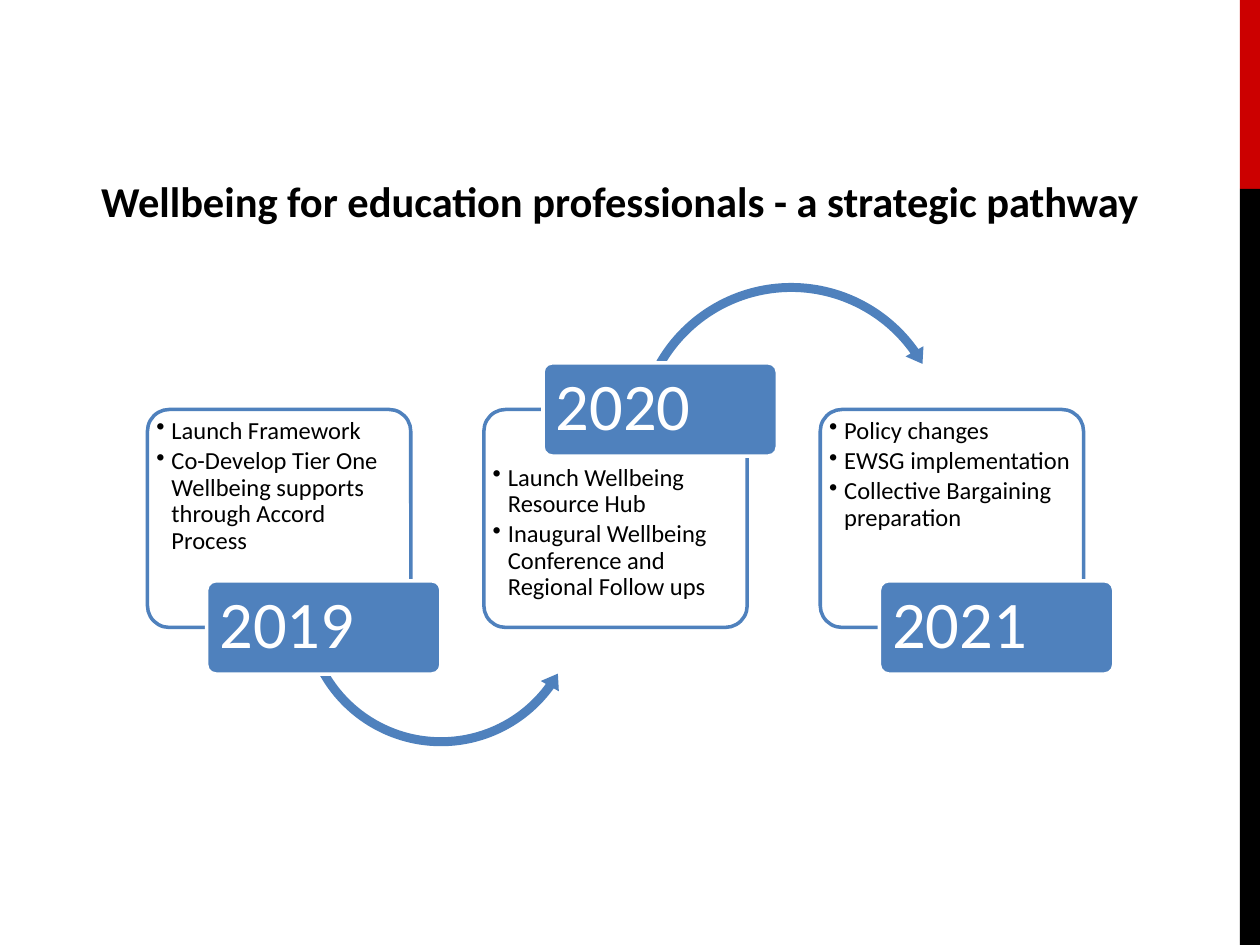
from dataclasses import dataclass
from typing import Optional

from lxml import etree
from pptx import Presentation
from pptx import util as u
from pptx.dml.color import RGBColor
from pptx.enum import shapes, text
from pptx.oxml import ns

RED = RGBColor(0xCC, 0x00, 0x00)
BLACK = RGBColor(0x00, 0x00, 0x00)
BLUE = RGBColor(0x4F, 0x81, 0xBD)
WHITE = RGBColor(0xFF, 0xFF, 0xFF)
SHAPE = shapes.MSO_SHAPE

FIRST_CARD_LEFT, CARD_PITCH = 1.17, 2.67
CARD_TOP, CARD_WIDTH, CARD_HEIGHT = 3.25, 2.09, 1.73
LABEL_SHIFT, LABEL_WIDTH, LABEL_HEIGHT = 0.47, 1.86, 0.74
LABEL_ABOVE, LABEL_BELOW = 2.88, 4.61
BULLET_INDENT = 0.12


@dataclass
class Arrow:
    kind: SHAPE
    left: float
    top: float
    size: float
    adjustments: tuple[float, ...]


@dataclass
class Step:
    year: str
    actions: list[str]
    label_above: bool = False
    arrow: Optional[Arrow] = None


STEPS = [
    Step("2019",
         ["Launch Framework",
          "Co-Develop Tier One Wellbeing supports through Accord Process"],
         arrow=Arrow(SHAPE.LEFT_CIRCULAR_ARROW, 2.35, 3.67, 2.3,
                     (0.031, 3.805, 21.56, 90.245, 0.036))),
    Step("2020",
         ["Launch Wellbeing Resource Hub",
          "Inaugural Wellbeing Conference and Regional Follow ups"],
         label_above=True,
         arrow=Arrow(SHAPE.CIRCULAR_ARROW, 5, 2.2, 2.56,
                     (0.028, 3.382, 194.863, 125.755, 0.032))),
    Step("2021",
         ["Policy changes", "EWSG implementation",
          "Collective Bargaining preparation"]),
]


def set_format(target, values: dict) -> None:
    for name, value in values.items():
        setattr(target, name, value)


def set_font(font, size: float, color: RGBColor, bold: bool = False) -> None:
    set_format(font, {"name": "Calibri", "size": u.Pt(size), "bold": bold})
    font.color.rgb = color


def set_frame(frame, anchor, left: float, top: float, right: float, bottom: float) -> None:
    set_format(frame, {
        "word_wrap": True, "vertical_anchor": anchor,
        "margin_left": u.Inches(left), "margin_top": u.Inches(top),
        "margin_right": u.Inches(right), "margin_bottom": u.Inches(bottom),
    })


def add_box(page, kind, left: float, top: float, width: float, height: float,
            fill: RGBColor, line: Optional[RGBColor] = None):
    box = page.shapes.add_shape(
        kind, u.Inches(left), u.Inches(top), u.Inches(width), u.Inches(height))
    box.shadow.inherit = False
    box.fill.solid()
    box.fill.fore_color.rgb = fill
    if line is None:
        box.line.fill.background()
    else:
        box.line.color.rgb = line
        box.line.width = u.Pt(2)
    if kind == SHAPE.ROUNDED_RECTANGLE:
        box.adjustments[0] = 0.1
    return box


def set_opacity(box, percent: int) -> None:
    color = box.fill._xPr.find(".//" + ns.qn("a:srgbClr"))
    etree.SubElement(color, ns.qn("a:alpha"), val=str(percent * 1000))


def add_bullet(para) -> None:
    properties = para._p.get_or_add_pPr()
    properties.set("marL", str(u.Inches(BULLET_INDENT)))
    properties.set("indent", str(-u.Inches(BULLET_INDENT)))
    etree.SubElement(properties, ns.qn("a:buChar"), char="•")


def add_card(page, left: float, step: Step) -> None:
    card = add_box(page, SHAPE.ROUNDED_RECTANGLE, left, CARD_TOP,
                   CARD_WIDTH, CARD_HEIGHT, WHITE, BLUE)
    set_opacity(card, 90)
    frame = card.text_frame
    top = 0.39 if step.label_above else 0.02
    set_frame(frame, text.MSO_ANCHOR.TOP, 0.02, top, 0.02, 0.02)
    for index, action in enumerate(step.actions):
        para = frame.add_paragraph() if index else frame.paragraphs[0]
        add_bullet(para)
        para.text = action
        set_format(para, {"alignment": text.PP_ALIGN.LEFT, "line_spacing": 0.9,
                          "space_after": u.Pt(2.1)})
        set_font(para.font, 14, BLACK)


def add_arrow(page, arrow: Arrow) -> None:
    shape = add_box(page, arrow.kind, arrow.left, arrow.top, arrow.size, arrow.size, BLUE)
    for index, value in enumerate(arrow.adjustments):
        shape.adjustments[index] = value


def add_year_label(page, left: float, step: Step) -> None:
    top = LABEL_ABOVE if step.label_above else LABEL_BELOW
    label = add_box(page, SHAPE.ROUNDED_RECTANGLE, left + LABEL_SHIFT, top,
                    LABEL_WIDTH, LABEL_HEIGHT, BLUE, WHITE)
    set_frame(label.text_frame, text.MSO_ANCHOR.MIDDLE, 0.08, 0.05, 0.08, 0.05)
    para = label.text_frame.paragraphs[0]
    para.text = step.year
    set_format(para, {"alignment": text.PP_ALIGN.LEFT, "line_spacing": 0.9})
    set_font(para.font, 38, WHITE)


def add_title(page, wording: str) -> None:
    title = page.shapes.title
    set_format(title, {"left": u.Inches(0.67), "top": u.Inches(0.44),
                       "width": u.Inches(8.5), "height": u.Inches(1.61)})
    set_frame(title.text_frame, text.MSO_ANCHOR.BOTTOM, 0.1, 0.05, 0.1, 0.26)
    para = title.text_frame.paragraphs[0]
    para.text = wording
    para.alignment = text.PP_ALIGN.CENTER
    set_font(para.font, 24.3, BLACK, bold=True)


def main() -> None:
    deck = Presentation()
    deck.slide_width, deck.slide_height = u.Inches(10), u.Inches(7.5)
    page = deck.slides.add_slide(deck.slide_layouts[0])
    subtitle = page.placeholders[1].element
    subtitle.getparent().remove(subtitle)

    add_box(page, SHAPE.RECTANGLE, 9.84, 0, 0.16, 1.5, RED)
    add_box(page, SHAPE.RECTANGLE, 9.84, 1.5, 0.16, 6, BLACK)
    add_title(page, "Wellbeing for education professionals - a strategic pathway")
    for index, step in enumerate(STEPS):
        left = FIRST_CARD_LEFT + index * CARD_PITCH
        add_card(page, left, step)
        if step.arrow:
            add_arrow(page, step.arrow)
        add_year_label(page, left, step)
    deck.save("out.pptx")


if __name__ == "__main__":
    main()
